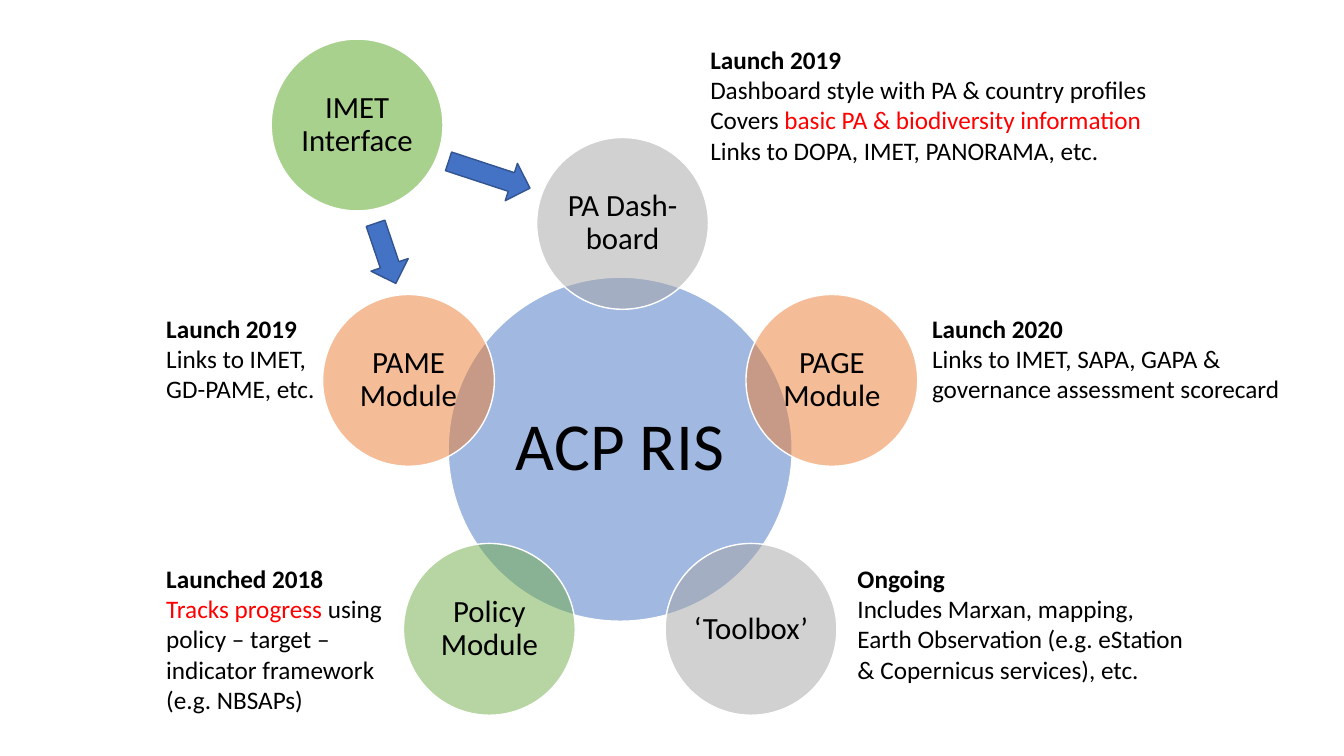
from math import cos, radians, sin

from lxml.etree import SubElement
from pptx import Presentation
from pptx.dml.color import RGBColor
from pptx.enum.shapes import MSO_SHAPE as Preset
from pptx.enum.text import MSO_ANCHOR as Anchor, MSO_AUTO_SIZE as AutoSize, PP_ALIGN as Align
from pptx.oxml.ns import qn
from pptx.util import Cm, Pt

FONT = "Calibri"
COLOURS = {
    "blue": "4472C4", "dark blue": "325491", "grey": "A5A5A5", "orange": "ED7D31",
    "green": "70AD47", "light green": "A9D18E",
    "white": "FFFFFF", "black": "000000", "red": "FF0000",
}

# Ring geometry, in cm
HUB_X, HUB_Y, HUB_SIZE = 15.63, 11.32, 8.67
RING_RADIUS, MODULE_SIZE = 5.61, 4.33

# Label, colour and small shift, clockwise from the top
MODULES = [
    ("PA Dash-board", "grey", 0.06, -0.08),
    ("PAGE Module", "orange", 0, 0),
    ("‘Toolbox’", "grey", 0, 0),
    ("Policy Module", "green", 0, 0),
    ("PAME Module", "orange", 0, 0),
]

# Left, top, width, height, wrap, heading, then lines of (text, colour) spans
NOTES = [
    (17.65, 0.99, 11.63, 3.33, False, "Launch 2019", [
        [("Dashboard style with PA & country profiles", "black")],
        [("Covers ", "black"), ("basic PA & biodiversity information", "red")],
        [("Links to DOPA, IMET, PANORAMA, etc.", "black")]]),
    (3.94, 7.77, 4.29, 2.57, False, "Launch 2019", [
        [("Links to IMET,", "black")],
        [("GD-PAME, etc.", "black")]]),
    (23.24, 7.77, 9.37, 2.57, False, "Launch 2020", [
        [("Links to IMET, SAPA, GAPA &", "black")],
        [("governance assessment scorecard", "black")]]),
    (3.94, 14.07, 5.99, 4.11, False, "Launched 2018", [
        [("Tracks progress ", "red"), ("using", "black")],
        [("policy – target –", "black")],
        [("indicator framework", "black")],
        [("(e.g. NBSAPs)", "black")]]),
    (21.36, 14.07, 8.97, 3.33, True, "Ongoing", [
        [("Includes Marxan, mapping, Earth Observation "
          "(e.g. eStation & Copernicus services), etc.", "black")]]),
]

# Left, top, width, height, rotation
ARROWS = [(8.92, 5.89, 1.6, 0.99, 71.3), (11.25, 3.91, 2.16, 0.99, 18.2)]


def rgb(name):
    return RGBColor.from_string(COLOURS[name])


def format_font(font, size, colour="black", bold=False):
    font.name = FONT
    font.size = Pt(size)
    font.bold = bold
    font.color.rgb = rgb(colour)


def add_filled(page, preset, bounds, fill, line):
    shape = page.shapes.add_shape(preset, *map(Cm, bounds))
    shape.shadow.inherit = False
    shape.fill.solid()
    shape.fill.fore_color.rgb = rgb(fill)
    shape.line.color.rgb = rgb(line)
    shape.line.width = Pt(1)
    return shape


def add_circle(page, label, centre_x, centre_y, size, colour, font_size=22, inset=0.08, opacity=50):
    bounds = centre_x - size / 2, centre_y - size / 2, size, size
    circle = add_filled(page, Preset.OVAL, bounds, colour, "white")
    if opacity < 100:
        fill_colour = circle.element.spPr.find(qn("a:solidFill")).find(qn("a:srgbClr"))
        SubElement(fill_colour, qn("a:alpha")).set("val", str(opacity * 1000))
    frame = circle.text_frame
    frame.word_wrap = True
    frame.vertical_anchor = Anchor.MIDDLE
    frame.margin_left = frame.margin_right = Cm(inset)
    frame.margin_top = frame.margin_bottom = Cm(inset)
    frame.text = label
    para = frame.paragraphs[0]
    para.alignment = Align.CENTER
    para.line_spacing = 0.9
    format_font(para.runs[0].font, font_size)


def add_note(page, left, top, width, height, wrap, heading, lines):
    box = page.shapes.add_textbox(Cm(left), Cm(top), Cm(width), Cm(height))
    frame = box.text_frame
    frame.word_wrap = wrap
    frame.auto_size = AutoSize.SHAPE_TO_FIT_TEXT
    frame.text = heading
    format_font(frame.paragraphs[0].runs[0].font, 18, bold=True)
    for line in lines:
        para = frame.add_paragraph()
        for text, colour in line:
            span = para.add_run()
            span.text = text
            format_font(span.font, 18, colour)


def main():
    deck = Presentation()
    deck.slide_width, deck.slide_height = Cm(33.87), Cm(19.05)
    page = deck.slides.add_slide(deck.slide_layouts[6])

    # Hub and its ring of modules
    add_circle(page, "ACP RIS", HUB_X, HUB_Y, HUB_SIZE, "blue", font_size=48, inset=0.18)
    for index, (label, colour, shift_x, shift_y) in enumerate(MODULES):
        angle = radians(index * 360 / len(MODULES) - 90)
        centre_x = HUB_X + RING_RADIUS * cos(angle) + shift_x
        centre_y = HUB_Y + RING_RADIUS * sin(angle) + shift_y
        add_circle(page, label, centre_x, centre_y, MODULE_SIZE, colour)

    # Notes beside the modules
    for note in NOTES:
        add_note(page, *note)

    # Interface feeding two modules
    add_circle(page, "IMET Interface", 9, 3.15, MODULE_SIZE, "light green", opacity=100)
    for *bounds, rotation in ARROWS:
        arrow = add_filled(page, Preset.RIGHT_ARROW, bounds, "blue", "dark blue")
        arrow.rotation = rotation

    deck.save("out.pptx")


if __name__ == "__main__":
    main()
